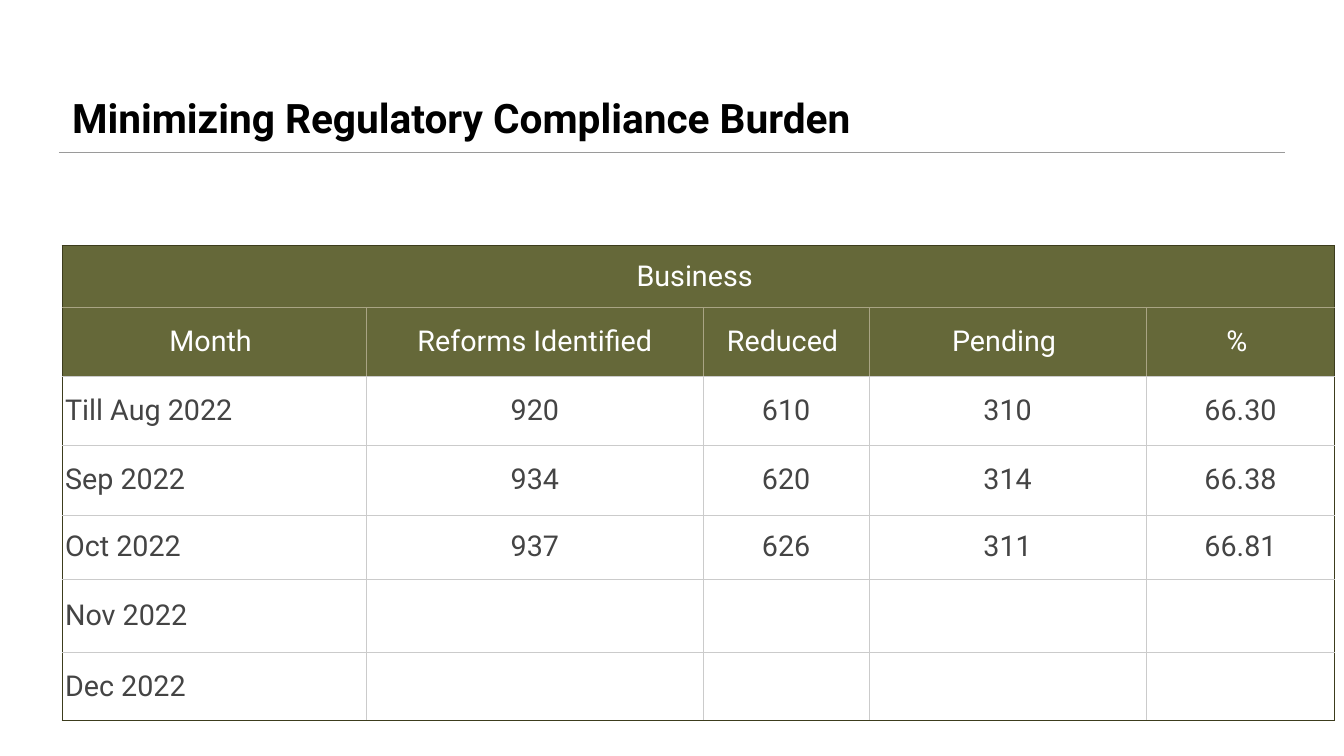
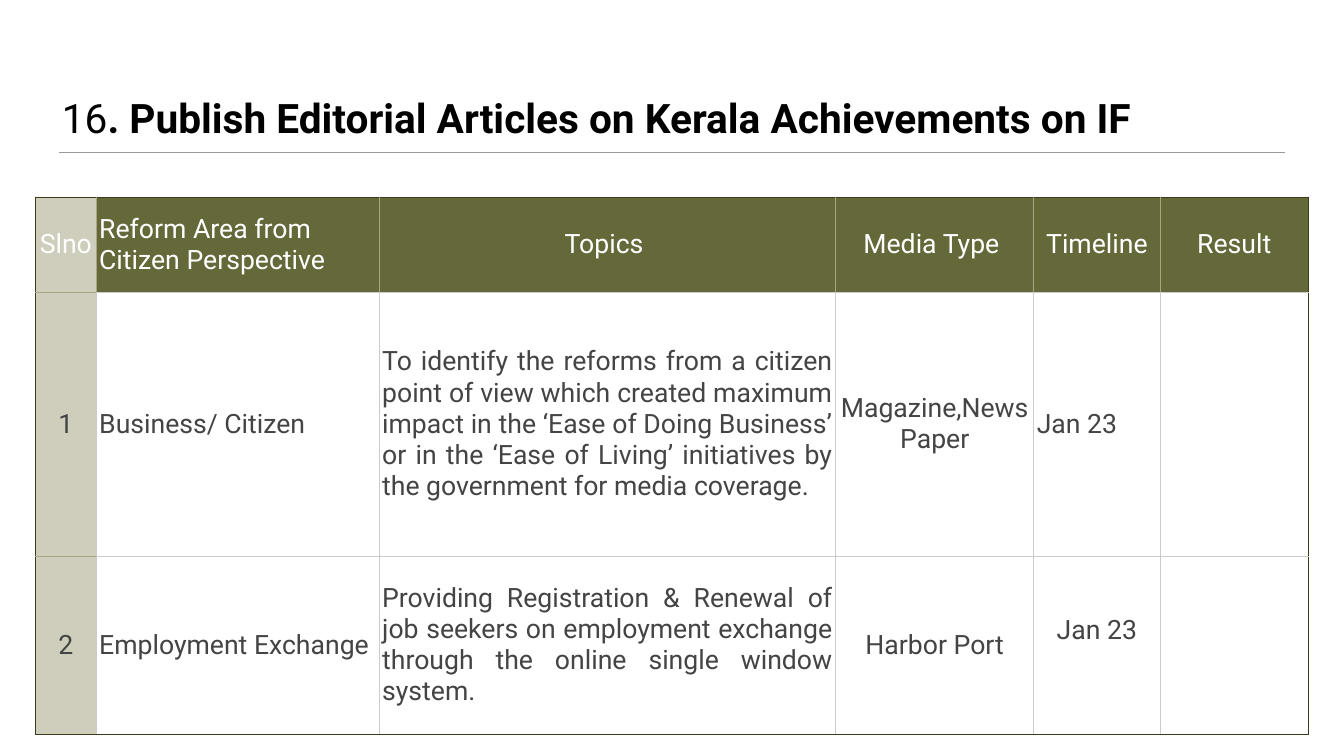
from lxml import etree
from pptx import Presentation
from pptx.dml.color import RGBColor
from pptx.enum.shapes import MSO_CONNECTOR
from pptx.enum.text import MSO_ANCHOR, PP_ALIGN
from pptx.oxml.ns import qn
from pptx.util import Pt

PX = 9525
INSET = 6 * PX
FONT = "Roboto"
TITLE_SIZE = 58
BLACK, WHITE, BODY_TEXT = "000000", "FFFFFF", "444444"
OLIVE, LABEL_TINT = "656839", "CFCDBB"
OUTER_LINE, OLIVE_LINE, GRID_LINE, RULE_LINE = "3C3C1D", "A9A484", "CBCBCB", "9A9A9A"
MIDDLE, BOTTOM = MSO_ANCHOR.MIDDLE, MSO_ANCHOR.BOTTOM
STRAIGHT = MSO_CONNECTOR.STRAIGHT
ALIGN = {"l": PP_ALIGN.LEFT, "c": PP_ALIGN.CENTER, "j": PP_ALIGN.JUSTIFY}

# Each row: height, one alignment letter per cell, texts (one text spans the row).
PAGES = [
    {
        "title": [(" Minimizing Regulatory Compliance Burden", True)],
        "left": 118, "top": 468, "size": 41,
        "header_rows": 2, "label_column": False, "raised": None,
        "columns": [580, 642, 315, 529, 358],
        "rows": [
            (118, "c", ["Business "]),
            (131, "ccccc", ["Month ", "Reforms Identified", "Reduced ", "Pending ", "% "]),
            (131, "lcccc", ["Till Aug 2022", "920", "610", "310", "66.30"]),
            (133, "lcccc", ["Sep 2022", "934", "620", "314", "66.38"]),
            (122, "lcccc", ["Oct 2022", "937", "626", "311", "66.81"]),
            (139, "lcccc", ["Nov 2022", "", "", "", ""]),
            (131, "lcccc", ["Dec 2022", "", "", "", ""]),
        ],
    },
    {
        "title": [("16", False),
                  (". Publish Editorial Articles on Kerala Achievements on IF", True)],
        "left": 68, "top": 375, "size": 38,
        "header_rows": 1, "label_column": True, "raised": (2, 4),
        "columns": [115, 539, 870, 377, 241, 282],
        "rows": [
            (182, "clcccc", ["Slno ", "Reform Area from Citizen Perspective", "Topics ",
                             "Media Type ", "Timeline", "Result"]),
            (502, "cljclc", [
                "1", "Business/ Citizen",
                "To identify the reforms from a citizen point of view which created "
                "maximum impact in the ‘Ease of Doing Business’ or in the ‘Ease of "
                "Living’ initiatives by the government for media coverage.",
                "Magazine,News Paper", "Jan 23", ""]),
            (339, "cljccc", [
                "2", "Employment Exchange",
                "Providing Registration & Renewal of job seekers on employment "
                "exchange through the online single window system.",
                "Harbor Port", "Jan 23", ""]),
        ],
    },
]


def rgb(value):
    return RGBColor.from_string(value)


def add_span(para, text, size, color, bold=False):
    span = para.add_run()
    span.text = text
    span.font.name = FONT
    span.font.size = Pt(size)
    span.font.bold = bold
    span.font.color.rgb = rgb(color)


deck = Presentation()
deck.slide_width, deck.slide_height = 2560 * PX, 1440 * PX

for content in PAGES:
    page = deck.slides.add_slide(deck.slide_layouts[6])
    page.background.fill.solid()
    page.background.fill.fore_color.rgb = rgb(WHITE)

    rule = page.shapes.add_connector(STRAIGHT, 112 * PX, 291 * PX, 2448 * PX, 291 * PX)
    rule.line.color.rgb = rgb(RULE_LINE)
    rule.line.width = Pt(1)
    etree.SubElement(rule._element.spPr, qn("a:effectLst"))

    box = page.shapes.add_textbox(112 * PX, 69 * PX, 2335 * PX, 206 * PX)
    frame = box.text_frame
    frame.word_wrap = True
    frame.vertical_anchor = BOTTOM
    frame.margin_left = frame.margin_right = INSET
    frame.margin_top = frame.margin_bottom = INSET
    for text, bold in content["title"]:
        add_span(frame.paragraphs[0], text, TITLE_SIZE, BLACK, bold)

    columns, rows = content["columns"], content["rows"]
    last_row, last_column = len(rows) - 1, len(columns) - 1
    table = page.shapes.add_table(
        len(rows), len(columns), content["left"] * PX, content["top"] * PX,
        sum(columns) * PX, sum(row[0] for row in rows) * PX).table
    table.first_row = table.horz_banding = False
    for column, width in zip(table.columns, columns):
        column.width = width * PX

    for r, (height, aligns, texts) in enumerate(rows):
        table.rows[r].height = height * PX
        if len(texts) == 1:
            table.cell(r, 0).merge(table.cell(r, last_column))

        for c in range(len(columns)):
            cell = table.cell(r, c)
            is_header = r < content["header_rows"]
            is_label = content["label_column"] and c == 0
            inner = OLIVE_LINE if is_header or is_label else GRID_LINE
            below = GRID_LINE if r == content["header_rows"] - 1 else inner
            right_column = c + cell.span_width - 1 if cell.is_merge_origin else c
            sides = {
                "a:lnL": OUTER_LINE if c == 0 else inner,
                "a:lnR": OUTER_LINE if right_column == last_column else inner,
                "a:lnT": OUTER_LINE if r == 0 else inner,
                "a:lnB": OUTER_LINE if r == last_row else below,
            }
            properties = cell._tc.get_or_add_tcPr()
            for side, color in sides.items():
                line = etree.SubElement(properties, qn(side), w=str(Pt(1)))
                solid = etree.SubElement(line, qn("a:solidFill"))
                etree.SubElement(solid, qn("a:srgbClr"), val=color)

            cell.fill.solid()
            cell.fill.fore_color.rgb = rgb(
                LABEL_TINT if is_label else OLIVE if is_header else WHITE)
            cell.vertical_anchor = MIDDLE
            cell.margin_left = cell.margin_right = INSET
            cell.margin_top = cell.margin_bottom = INSET
            if (r, c) == content["raised"]:
                cell.margin_bottom = 62 * PX
            if c < len(texts) and texts[c]:
                para = cell.text_frame.paragraphs[0]
                para.alignment = ALIGN[aligns[c]]
                add_span(para, texts[c], content["size"], WHITE if is_header else BODY_TEXT)

deck.save("out.pptx")
